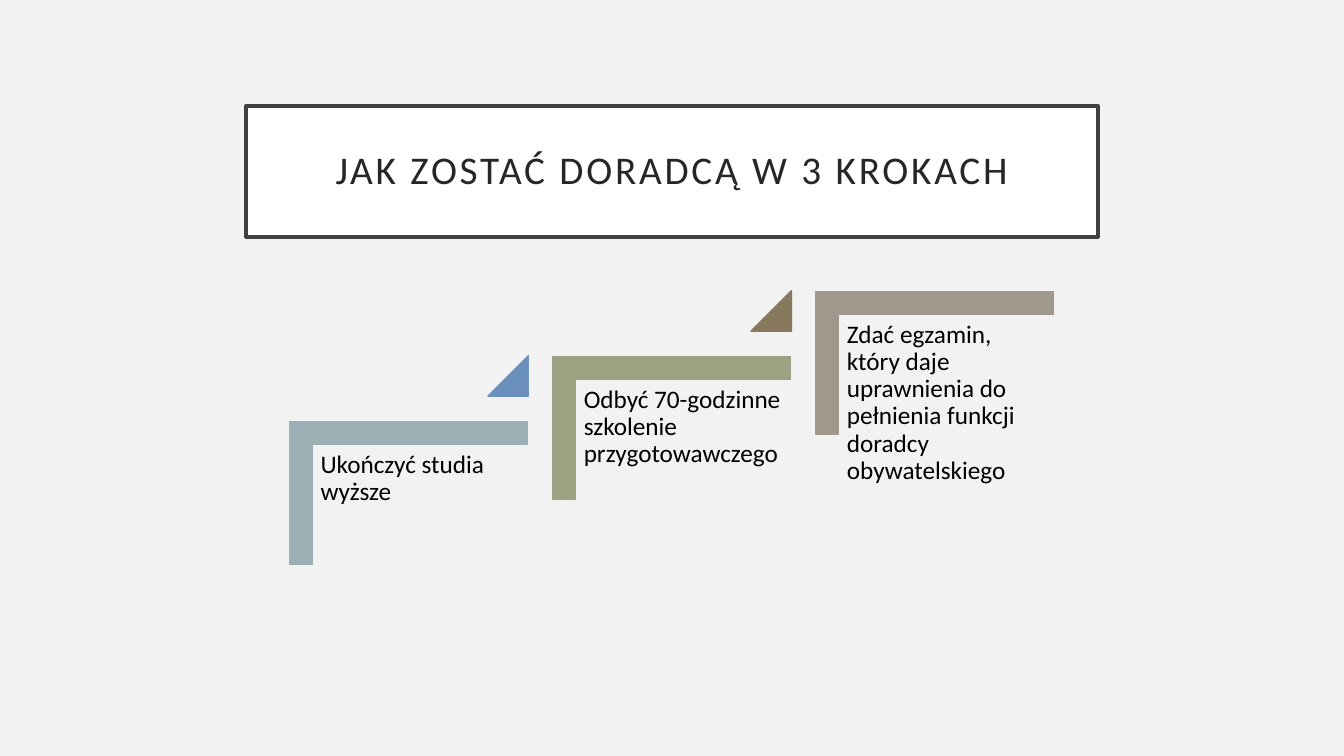
import pptx
import pptx.util
import pptx.dml.color
import pptx.enum.shapes
import pptx.enum.text

Inches = pptx.util.Inches
Pt = pptx.util.Pt
MSO_SHAPE = pptx.enum.shapes.MSO_SHAPE

FONT = "Calibri"
STEPS = [
    ("Ukończyć studia wyższe", "9BAFB5", "6B90BD"),
    ("Odbyć 70-godzinne szkolenie przygotowawczego", "9CA383", "87795D"),
    ("Zdać egzamin, który daje uprawnienia do pełnienia funkcji doradcy obywatelskiego", "A0988C", None),
]


def color(value):
    return pptx.dml.color.RGBColor.from_string(value)


def paint(shape, fill, line, width):
    shape.fill.solid()
    shape.fill.fore_color.rgb = color(fill)
    shape.line.color.rgb = color(line)
    shape.line.width = Pt(width)


def set_text(shape, text, size, text_color, inset, anchor, alignment):
    frame = shape.text_frame
    frame.word_wrap = True
    frame.auto_size = pptx.enum.text.MSO_AUTO_SIZE.NONE
    frame.vertical_anchor = anchor
    frame.margin_left = frame.margin_right = Inches(inset)
    frame.margin_top = frame.margin_bottom = Inches(inset)
    frame.text = text
    paragraph = frame.paragraphs[0]
    paragraph.alignment = alignment
    paragraph.line_spacing = 0.9
    paragraph.font.name = FONT
    paragraph.font.size = Pt(size)
    paragraph.font.color.rgb = color(text_color)
    return paragraph


def add_title(slide, left, top, width, height):
    title = slide.shapes.title
    title.left, title.top = Inches(left), Inches(top)
    title.width, title.height = Inches(width), Inches(height)
    paint(title, "FFFFFF", "404040", 2.5)
    paragraph = set_text(title, "JAK ZOSTAĆ DORADCĄ W 3 KROKACH", 28, "262626", 0.2,
                         pptx.enum.text.MSO_ANCHOR.MIDDLE, pptx.enum.text.PP_ALIGN.CENTER)
    paragraph.runs[0].font._element.set("spc", "200")


def add_preset(shapes, kind, left, top, width, height, fill, adjustments):
    shape = shapes.add_shape(kind, Inches(left), Inches(top), Inches(width), Inches(height))
    shape.shadow.inherit = False
    paint(shape, fill, fill, 1)
    for index, value in enumerate(adjustments):
        shape.adjustments[index] = value
    return shape


def add_step(shapes, left, top, width, height, text, corner_color, triangle_color):
    corner = add_preset(shapes, MSO_SHAPE.CORNER, left + (width - height) / 2,
                        top - (width - height) / 2, height, width, corner_color, [0.161, 0.161])
    corner.rotation = 90
    label = shapes.add_textbox(Inches(left + 0.24), Inches(top + 0.23), Inches(2.13), Inches(1.87))
    set_text(label, text, 18, "000000", 0.07,
             pptx.enum.text.MSO_ANCHOR.TOP, pptx.enum.text.PP_ALIGN.LEFT)
    if triangle_color:
        side = 0.4
        add_preset(shapes, MSO_SHAPE.ISOSCELES_TRIANGLE, left + width - side + 0.01,
                   top - 0.65, side, side, triangle_color, [1])


def add_staircase(slide, left, top, width, height):
    step_width, step_height = 2.36, 1.42
    pitch = (width - step_width) / (len(STEPS) - 1)
    rise = (height - step_height) / (len(STEPS) - 1)
    group = slide.shapes.add_group_shape()
    for index, step in enumerate(STEPS):
        add_step(group.shapes, left + index * pitch, top + height - step_height - index * rise,
                 step_width, step_height, *step)


def main():
    presentation = pptx.Presentation()
    presentation.slide_width = Inches(13.33)
    presentation.slide_height = Inches(7.5)
    slide = presentation.slides.add_slide(presentation.slide_layouts[5])
    slide.background.fill.solid()
    slide.background.fill.fore_color.rgb = color("F2F2F2")
    add_title(slide, 2.44, 1.05, 8.45, 1.3)
    add_staircase(slide, 2.87, 2.89, 7.58, 2.71)
    presentation.save("out.pptx")


if __name__ == "__main__":
    main()
